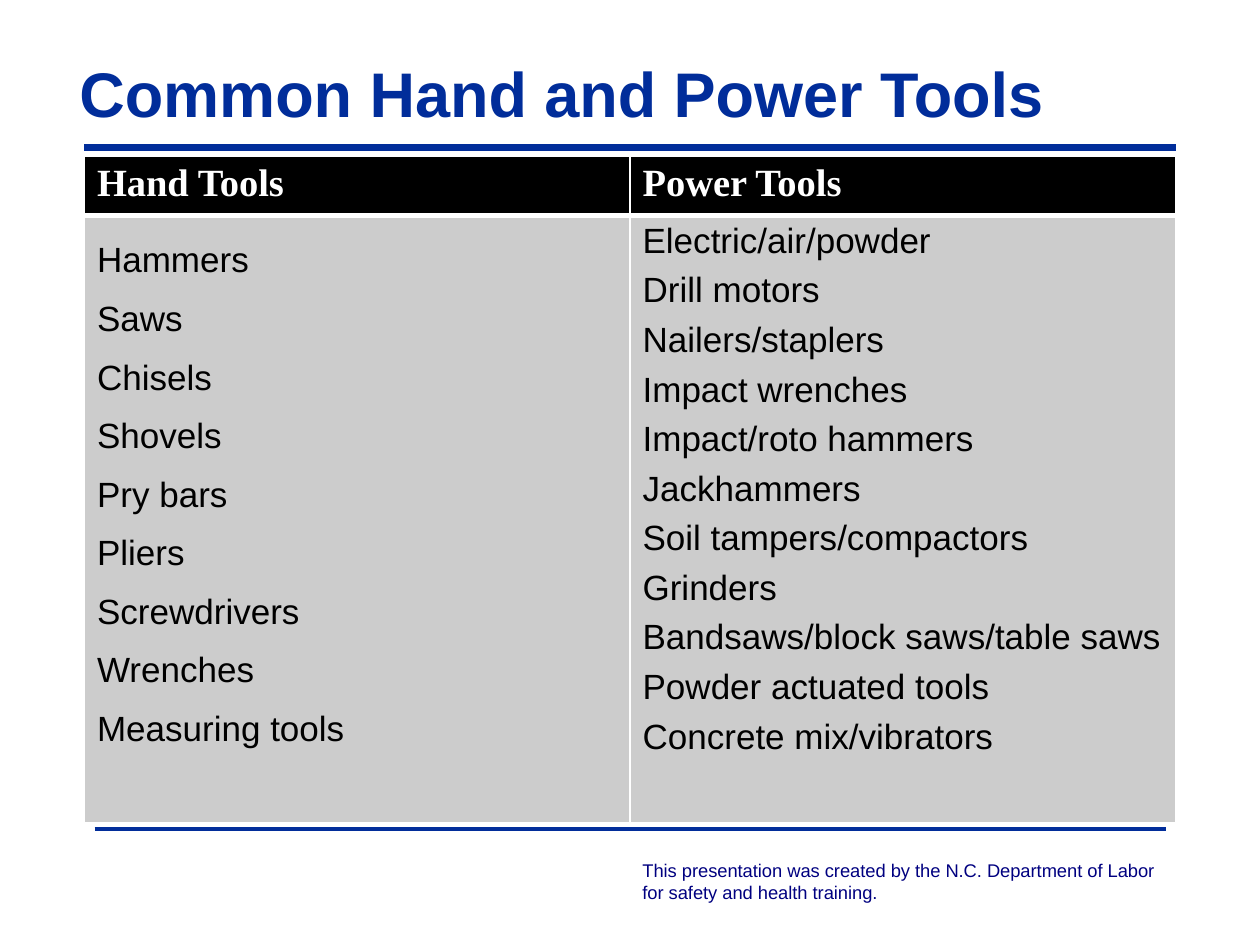
"""Build a slide listing common hand tools and power tools in two columns."""
from dataclasses import dataclass

from lxml.etree import SubElement
from pptx import Presentation
from pptx.dml.color import RGBColor
from pptx.enum.shapes import MSO_CONNECTOR
from pptx.enum.text import MSO_ANCHOR
from pptx.oxml import parse_xml
from pptx.oxml.ns import nsdecls, qn
from pptx.util import Inches, Pt

TITLE = "Common Hand and Power Tools"
CREDIT = ("This presentation was created by the N.C. Department of Labor "
          "for safety and health training.")
TOOL_GROUPS = [
    ("Hand Tools", {"line_spacing": 1.5}, [
        "Hammers", "Saws", "Chisels", "Shovels", "Pry bars", "Pliers",
        "Screwdrivers", "Wrenches", "Measuring tools"]),
    ("Power Tools", {"space_after": Pt(6)}, [
        "Electric/air/powder", "Drill motors", "Nailers/staplers",
        "Impact wrenches", "Impact/roto hammers", "Jackhammers",
        "Soil tampers/compactors", "Grinders",
        "Bandsaws/block saws/table saws", "Powder actuated tools",
        "Concrete mix/vibrators"]),
]


@dataclass(frozen=True)
class Style:
    size: float
    color: str
    font: str = "Arial"
    bold: bool = False


class Theme:
    title = Style(36, "012D9A", bold=True)
    credit = Style(10.5, "000080")
    header = Style(22, "FFFFFF", "Times New Roman", True)
    body = Style(20, "000000")
    rule = "012D9A"
    header_fill = "000000"
    body_fill = "CCCCCC"
    border = "FFFFFF"
    thin, thick = 1, 3


WIDTH, HEIGHT = 10, 7.5
MARGIN = 0.67
TABLE_TOP = 1.24
ROW_HEIGHTS = (0.47, 4.82)
RULES = [(MARGIN, 1.17, 4), (0.75, 6.58, 2)]


def write(frame, lines, style, **spacing):
    for index, line in enumerate(lines):
        paragraph = frame.paragraphs[0] if index == 0 else frame.add_paragraph()
        for name, value in spacing.items():
            setattr(paragraph, name, value)
        run = paragraph.add_run()
        run.text = line
        run.font.name = style.font
        run.font.size = Pt(style.size)
        run.font.bold = style.bold
        run.font.color.rgb = RGBColor.from_string(style.color)


def add_text(slide, box, line, style):
    frame = slide.shapes.add_textbox(*map(Inches, box)).text_frame
    frame.word_wrap = True
    write(frame, [line], style)
    return frame


def add_rule(slide, inset, y, weight):
    rule = slide.shapes.add_connector(
        MSO_CONNECTOR.STRAIGHT, *map(Inches, (inset, y, WIDTH - inset, y)))
    rule.line.color.rgb = RGBColor.from_string(Theme.rule)
    rule.line.width = Pt(weight)
    SubElement(rule._element.spPr, qn("a:effectLst"))


def paint_cell(cell, fill, top, bottom):
    cell.fill.solid()
    cell.fill.fore_color.rgb = RGBColor.from_string(fill)
    edges = {"L": Theme.thin, "R": Theme.thin, "T": top, "B": bottom}
    for index, (side, weight) in enumerate(edges.items()):
        cell._tc.get_or_add_tcPr().insert(index, parse_xml(
            f'<a:ln{side} {nsdecls("a")} w="{Pt(weight)}"><a:solidFill>'
            f'<a:srgbClr val="{Theme.border}"/></a:solidFill></a:ln{side}>'))


def add_tool_table(slide):
    width = WIDTH - 2 * MARGIN
    table = slide.shapes.add_table(
        len(ROW_HEIGHTS), len(TOOL_GROUPS),
        *map(Inches, (MARGIN, TABLE_TOP, width, sum(ROW_HEIGHTS)))).table
    for row, height in zip(table.rows, ROW_HEIGHTS):
        row.height = Inches(height)
    for column, (heading, spacing, tools) in enumerate(TOOL_GROUPS):
        table.columns[column].width = Inches(width / len(TOOL_GROUPS))
        header, body = table.cell(0, column), table.cell(1, column)
        write(header.text_frame, [heading], Theme.header)
        write(body.text_frame, tools, Theme.body, **spacing)
        paint_cell(header, Theme.header_fill, Theme.thin, Theme.thick)
        paint_cell(body, Theme.body_fill, Theme.thick, Theme.thin)


def main():
    deck = Presentation()
    deck.slide_width, deck.slide_height = Inches(WIDTH), Inches(HEIGHT)
    slide = deck.slides.add_slide(deck.slide_layouts[6])
    for rule in RULES:
        add_rule(slide, *rule)
    add_text(slide, (WIDTH / 2, 6.77, 4.42, 0.45), CREDIT, Theme.credit)
    add_tool_table(slide)
    title = add_text(slide, (0.58, 0.42, 8.83, 0.61), TITLE, Theme.title)
    title.margin_left = title.margin_right = Inches(0.05)
    title.margin_top = title.margin_bottom = 0
    title.vertical_anchor = MSO_ANCHOR.BOTTOM
    deck.save("out.pptx")


if __name__ == "__main__":
    main()
